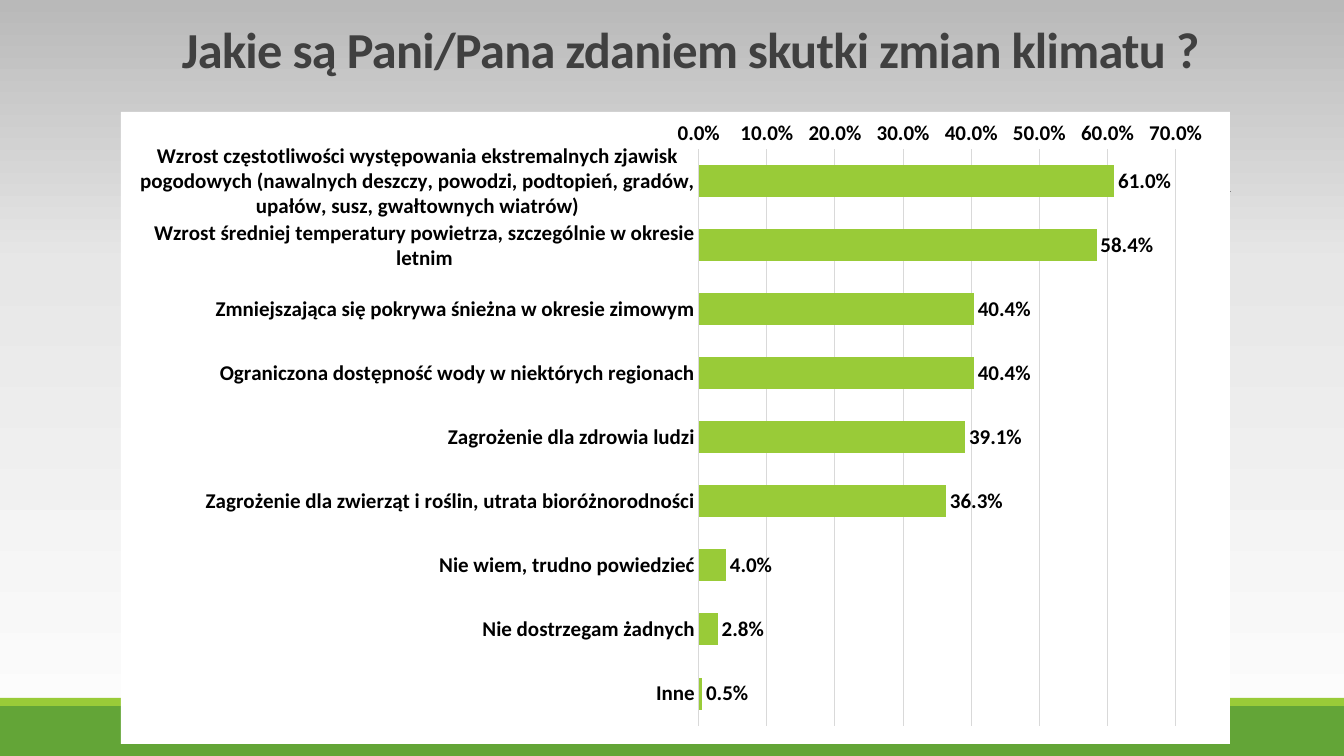
from copy import deepcopy

from lxml import etree
from pptx import Presentation
from pptx.chart.data import CategoryChartData
from pptx.dml.color import RGBColor
from pptx.enum.chart import XL_CHART_TYPE as ChartType
from pptx.enum.chart import XL_LABEL_POSITION as LabelPosition
from pptx.enum.chart import XL_TICK_MARK as TickMark
from pptx.enum.shapes import MSO_CONNECTOR as Connector
from pptx.enum.shapes import MSO_SHAPE as Shape
from pptx.enum.text import MSO_ANCHOR as Anchor
from pptx.oxml import parse_xml
from pptx.oxml.ns import nsdecls, qn
from pptx.util import Emu, Pt

WIDTH, HEIGHT = 1344, 756
SCALE = 12192000 / WIDTH
FONT = "Calibri"
GREEN, LIME, GRID = "63A537", "99CB38", "D9D9D9"
BACKGROUND = [(0, "FEFEFE"), (0.65, "E7E7E7"), (1, "B9B9B9")]
PLOT = {"x": 0.521, "y": 0.059, "w": 0.43, "h": 0.912}
ANSWERS = [
    ("Wzrost częstotliwości występowania ekstremalnych zjawisk pogodowych "
     "(nawalnych deszczy, powodzi, podtopień, gradów, upałów, susz, "
     "gwałtownych wiatrów)", 0.61),
    ("Wzrost średniej temperatury powietrza, szczególnie w okresie letnim", 0.584),
    ("Zmniejszająca się pokrywa śnieżna w okresie zimowym", 0.404),
    ("Ograniczona dostępność wody w niektórych regionach", 0.404),
    ("Zagrożenie dla zdrowia ludzi", 0.391),
    ("Zagrożenie dla zwierząt i roślin, utrata bioróżnorodności", 0.363),
    ("Nie wiem, trudno powiedzieć", 0.04),
    ("Nie dostrzegam żadnych", 0.028),
    ("Inne", 0.005),
]


def px(*lengths):
    """Turn pixel lengths into EMU."""
    return [Emu(round(length * SCALE)) for length in lengths]


def color(hex_code):
    """Turn a hex string into a colour."""
    return RGBColor.from_string(hex_code)


def set_font(font, size, hex_code):
    """Apply the bold slide font."""
    font.name, font.size, font.bold = FONT, Pt(size), True
    font.color.rgb = color(hex_code)


def set_line(line, hex_code, width):
    """Apply a colour and a width in points to a line."""
    line.color.rgb = color(hex_code)
    line.width = Pt(width)


def add_text(page, box, text, size, hex_code, spacing, tracking):
    """Add one bottom-anchored paragraph in the given box."""
    frame = page.shapes.add_textbox(*px(*box)).text_frame
    frame.word_wrap = True
    frame.vertical_anchor = Anchor.BOTTOM
    para = frame.paragraphs[0]
    para.line_spacing = spacing
    span = para.add_run()
    span.text = text
    set_font(span.font, size, hex_code)
    span.font.element.set("spc", str(tracking)) if hasattr(span.font, "element") else \
        para.runs[0].font._element.set("spc", str(tracking)) if hasattr(span.font, "_element") else \
        frame._txBody.find(".//" + qn("a:rPr")).set("spc", str(tracking))


def add_band(page, box, hex_code):
    """Add a plain filled band."""
    band = page.shapes.add_shape(Shape.RECTANGLE, *px(*box))
    band.shadow.inherit = False
    band.fill.solid()
    band.fill.fore_color.rgb = color(hex_code)
    band.line.fill.background()


def add_backdrop(page, box):
    """Paint the gradient, the bottom bands and the title rule."""
    left, top, width, height = box
    fill = page.background.fill
    fill.gradient()
    fill.gradient_angle = 90
    stops = page.element.find(".//" + qn("a:gsLst"))
    stops.append(deepcopy(stops[-1]))
    for stop, (position, hex_code) in zip(fill.gradient_stops, BACKGROUND):
        stop.position = position
        stop.color.rgb = color(hex_code)
    add_band(page, (left, top + height - 50, width, 50), GREEN)
    add_band(page, (left, top + height - 58, width, 8), LIME)
    rule = page.shapes.add_connector(
        Connector.STRAIGHT, *px(left + 132, top + 191, left + 1231, top + 191))
    set_line(rule.line, "808080", 0.5)
    etree.SubElement(rule.element.spPr, qn("a:effectLst"))


def place_plot(chart):
    """Fix the inner plot area and paint the chart white."""
    parts = "".join(f'<c:{key}Mode val="edge"/>' for key in "xy")
    parts += "".join(f'<c:{key} val="{value}"/>' for key, value in PLOT.items())
    area = chart.element.find(".//" + qn("c:plotArea"))
    for layout in area.findall(qn("c:layout")):
        area.remove(layout)
    area.insert(0, parse_xml(
        f'<c:layout {nsdecls("c")}><c:manualLayout>'
        f'<c:layoutTarget val="inner"/>{parts}</c:manualLayout></c:layout>'))
    chart.element.find(qn("c:chart")).addnext(parse_xml(
        f'<c:spPr {nsdecls("c", "a")}><a:solidFill><a:srgbClr val="FFFFFF"/>'
        '</a:solidFill><a:ln><a:noFill/></a:ln></c:spPr>'))


def add_answers(page, box):
    """Add the bar chart of the answers."""
    data = CategoryChartData(number_format="0.0%")
    data.categories = [answer for answer, share in ANSWERS]
    data.add_series("Series 1", [share for answer, share in ANSWERS])
    chart = page.shapes.add_chart(ChartType.BAR_CLUSTERED, *px(*box), data).chart
    chart.has_title = chart.has_legend = False
    set_font(chart.font, 15, "000000")
    place_plot(chart)

    for axis in (chart.category_axis, chart.value_axis):
        axis.major_tick_mark = axis.minor_tick_mark = TickMark.NONE
        set_font(axis.tick_labels.font, 15, "000000")
    chart.category_axis.reverse_order = True
    set_line(chart.category_axis.format.line, GRID, 0.75)
    shares = chart.value_axis
    shares.minimum_scale, shares.maximum_scale, shares.major_unit = 0, 0.7, 0.1
    shares.tick_labels.number_format = "0.0%"
    shares.tick_labels.number_format_is_linked = False
    shares.format.line.fill.background()
    set_line(shares.major_gridlines.format.line, GRID, 0.75)

    plot = chart.plots[0]
    plot.gap_width = 100
    plot.vary_by_categories = False
    bars = plot.series[0]
    bars.format.fill.solid()
    bars.format.fill.fore_color.rgb = color(LIME)
    labels = bars.data_labels
    labels.show_value = True
    labels.position = LabelPosition.OUTSIDE_END
    labels.number_format = "0.0%"
    labels.number_format_is_linked = False
    set_font(labels.font, 15, "000000")


def main():
    """Build the slide and save the deck."""
    deck = Presentation()
    deck.slide_width, deck.slide_height = px(WIDTH, HEIGHT)
    page = deck.slides.add_slide(deck.slide_layouts[6])
    add_backdrop(page, (0, 0, WIDTH, HEIGHT))
    add_text(page, (172, 22, 1058, 62),
             "Jakie są Pani/Pana zdaniem skutki zmian klimatu ?",
             size=36, hex_code="404040", spacing=0.85, tracking=-50)
    add_answers(page, (121, 112, 1109, 632))
    deck.save("out.pptx")


if __name__ == "__main__":
    main()
